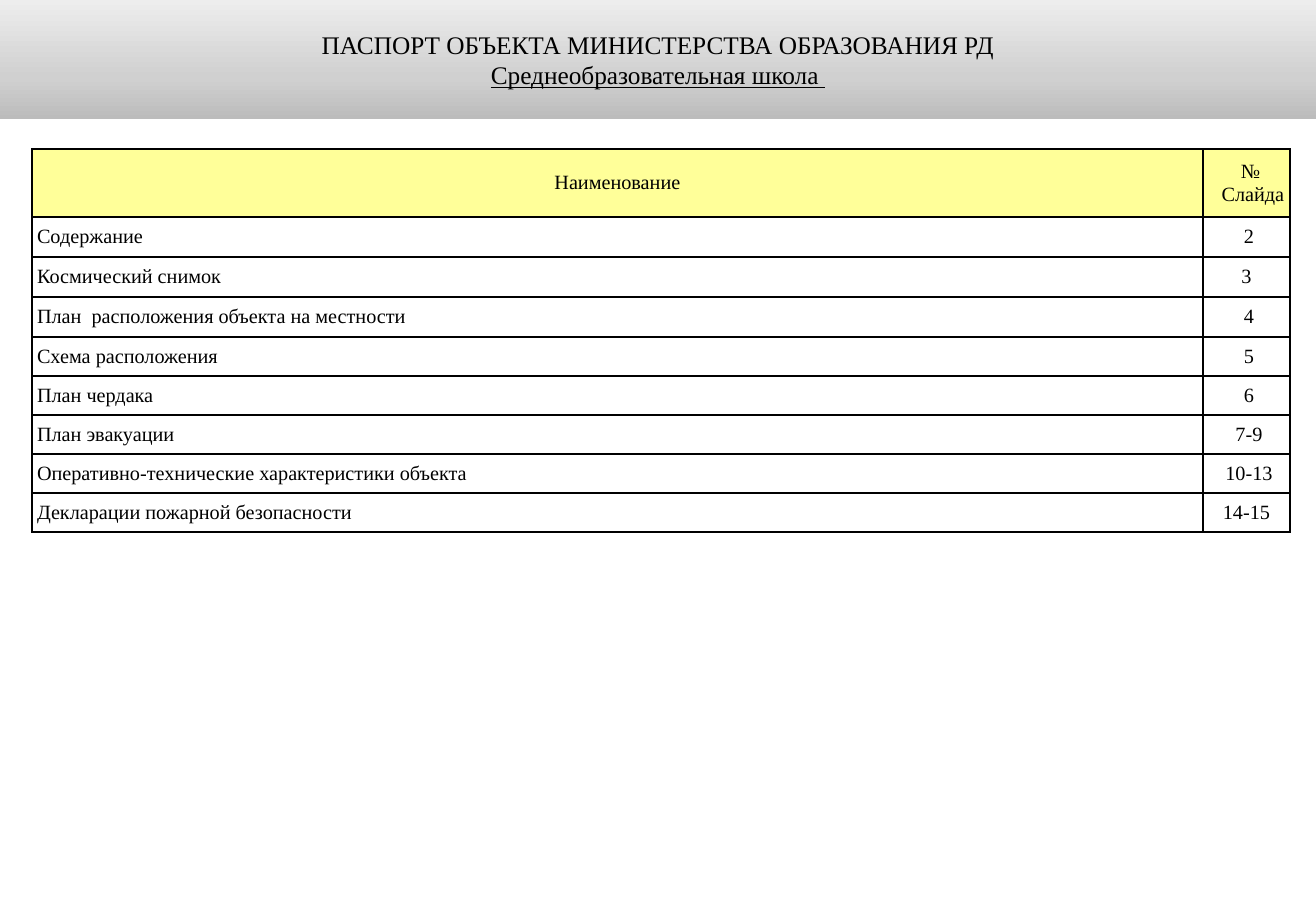
from copy import deepcopy

from lxml.etree import SubElement
from pptx import Presentation
from pptx.dml.color import RGBColor
from pptx.enum.text import MSO_ANCHOR, MSO_AUTO_SIZE, PP_ALIGN
from pptx.oxml.ns import qn
from pptx.util import Pt

PX = 7526
BLACK = RGBColor(0x00, 0x00, 0x00)
YELLOW = RGBColor(0xFF, 0xFF, 0x99)
BANNER_STOPS = [
    (0, RGBColor(0xBC, 0xBC, 0xBC)),
    (0.35, RGBColor(0xD0, 0xD0, 0xD0)),
    (1, RGBColor(0xED, 0xED, 0xED)),
]
TITLE_FONT = {"name": "Times New Roman", "size": Pt(15), "bold": False}
CELL_FONT = {"name": "Times New Roman", "size": Pt(12), "bold": False}
TITLE_LINES = ["ПАСПОРТ ОБЪЕКТА МИНИСТЕРСТВА ОБРАЗОВАНИЯ РД", "Среднеобразовательная школа "]
COLUMNS = [1171, 87]
ROWS = [68] + [40] * 3 + [39] * 5
CONTENTS = [
    ("Наименование", "№ \nСлайда"),
    ("Содержание", " 2"),
    ("Космический снимок", "3"),
    ("План  расположения объекта на местности", " 4"),
    ("Схема расположения", " 5"),
    ("План чердака", " 6"),
    ("План эвакуации", " 7-9"),
    ("Оперативно-технические характеристики объекта", " 10-13"),
    ("Декларации пожарной безопасности", "14-15"),
]


def apply(target, formats):
    """Set every attribute in formats on target."""
    for name, value in formats.items():
        setattr(target, name, value)


def write(tf, lines, formats, align, indent=0):
    """Write one formatted paragraph per line."""
    tf.text = "\n".join(lines)
    for p in tf.paragraphs:
        p.alignment = align
        if indent:
            p._p.get_or_add_pPr().set("marL", str(indent * PX))
        for r in p.runs:
            apply(r.font, formats)
            r.font.color.rgb = BLACK


def fill_gradient(sp, stops):
    """Fill a shape with a gradient that rises from its bottom edge."""
    sp.fill.gradient()
    sp.fill.gradient_angle = 90
    gs_list = sp._element.spPr.find(qn("a:gradFill")).find(qn("a:gsLst"))
    gs_list.append(deepcopy(gs_list[0]))
    for stop, (position, color) in zip(sp.fill.gradient_stops, stops):
        stop.position = position
        stop.color.rgb = color


def add_banner(s):
    """Turn the title placeholder into the heading banner."""
    sp = s.shapes.title
    apply(sp, {"left": 0, "top": 0, "width": 1316 * PX, "height": 119 * PX})
    fill_gradient(sp, BANNER_STOPS)
    tf = sp.text_frame
    apply(tf, {"word_wrap": True, "auto_size": MSO_AUTO_SIZE.NONE,
               "vertical_anchor": MSO_ANCHOR.MIDDLE})
    write(tf, TITLE_LINES, TITLE_FONT, PP_ALIGN.CENTER)
    tf.paragraphs[1].runs[0].font.underline = True


def add_borders(cell):
    """Draw a thin black line on each side of a cell."""
    tcPr = cell._tc.get_or_add_tcPr()
    for side in ("a:lnL", "a:lnR", "a:lnT", "a:lnB"):
        ln = SubElement(tcPr, qn(side), w=str(Pt(1)))
        fill = SubElement(ln, qn("a:solidFill"))
        SubElement(fill, qn("a:srgbClr"), val=str(BLACK))


def format_cell(cell, text, is_header, is_name):
    """Fill in one cell of the contents table."""
    apply(cell, {"margin_left": 0, "margin_right": 0, "margin_top": 0,
                 "margin_bottom": 0, "vertical_anchor": MSO_ANCHOR.MIDDLE})
    add_borders(cell)
    if is_header:
        cell.fill.solid()
        cell.fill.fore_color.rgb = YELLOW
    else:
        cell.fill.background()
    align = PP_ALIGN.LEFT if is_name and not is_header else PP_ALIGN.CENTER
    indent = 0 if is_header == is_name else 5
    if is_header and not is_name:
        indent = 13
    elif not is_name:
        indent = 0
    elif not is_header:
        indent = 5
    write(cell.text_frame, text.split("\n"), CELL_FONT, align, indent)


def add_contents(s):
    """Add the table that lists the slides."""
    frame = s.shapes.add_table(len(ROWS), len(COLUMNS), 32 * PX, 149 * PX,
                               sum(COLUMNS) * PX, sum(ROWS) * PX)
    table = frame.table
    apply(table, {"first_row": False, "horz_banding": False})
    for column, width in zip(table.columns, COLUMNS):
        column.width = width * PX
    for i, (height, texts) in enumerate(zip(ROWS, CONTENTS)):
        table.rows[i].height = height * PX
        for j, text in enumerate(texts):
            format_cell(table.cell(i, j), text, i == 0, j == 0)


def main():
    """Build the slide and save it."""
    prs = Presentation()
    apply(prs, {"slide_width": 1316 * PX, "slide_height": 911 * PX})
    s = prs.slides.add_slide(prs.slide_layouts[5])
    add_banner(s)
    add_contents(s)
    prs.save("out.pptx")


if __name__ == "__main__":
    main()
